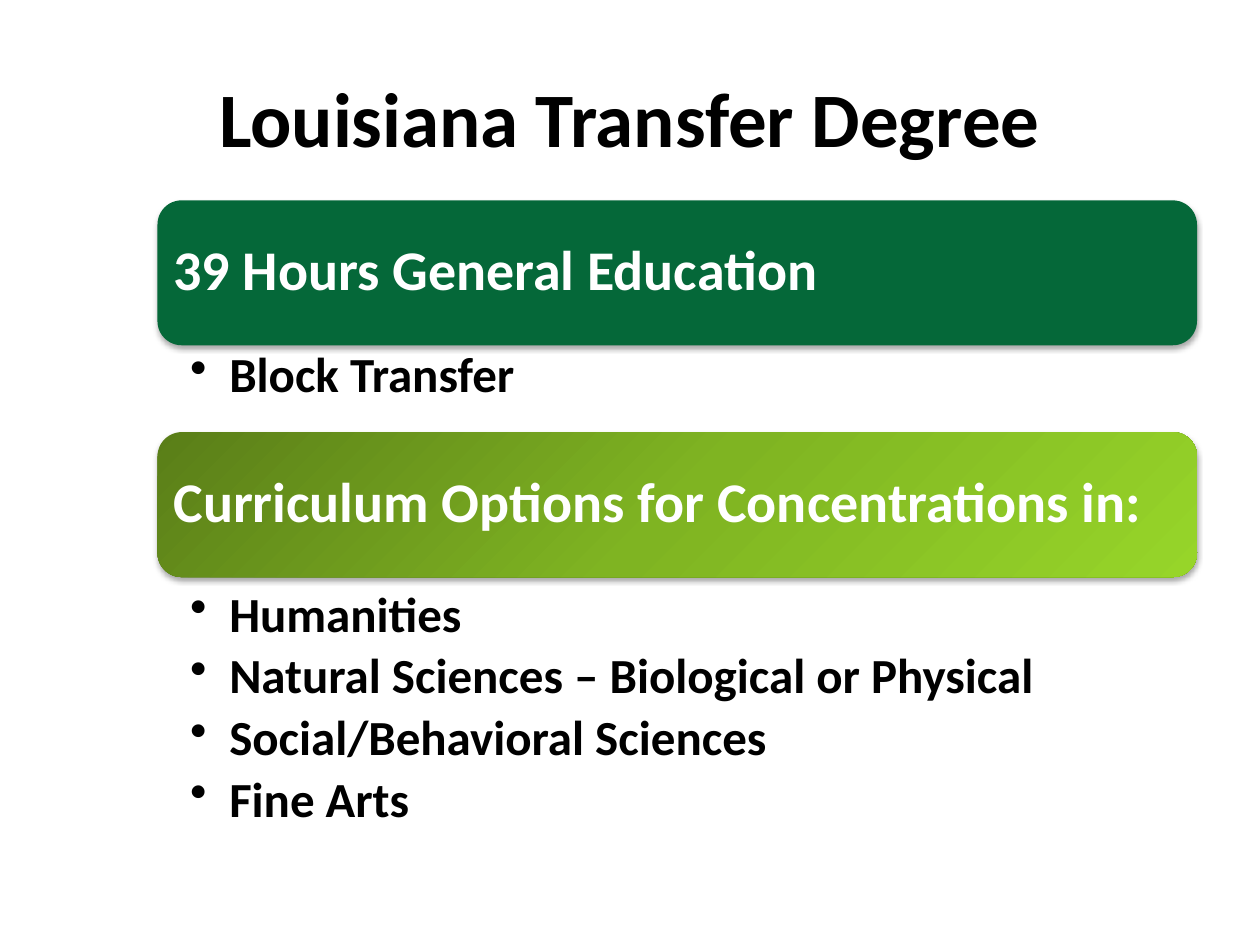
from dataclasses import dataclass

from lxml import etree
from pptx import Presentation
from pptx.dml.color import RGBColor
from pptx.enum import shapes, text
from pptx.oxml import ns
from pptx.util import Inches, Pt

BLACK = RGBColor(0x00, 0x00, 0x00)
WHITE = RGBColor(0xFF, 0xFF, 0xFF)
GREEN = RGBColor(0x05, 0x68, 0x39)
LIME_STOPS = (
    (0, RGBColor(0x5A, 0x7E, 0x18)),
    (50, RGBColor(0x7F, 0xB4, 0x22)),
    (100, RGBColor(0x97, 0xD5, 0x29)),
)

FONT = "Calibri"
LEFT, WIDTH = Inches(1.25), Inches(8.25)
BANNER_HEIGHT = Inches(1.15)
BULLET_INDENT = Inches(0.31)


@dataclass
class Section:
    heading: str
    top: float
    stops: tuple
    bullets: tuple
    bullets_top: float
    bullets_height: float


SECTIONS = (
    Section("39 Hours General Education", 1.59, ((0, GREEN),),
            ("Block Transfer",), 2.74, 1.01),
    Section("Curriculum Options for Concentrations in:", 3.43, LIME_STOPS,
            ("Humanities", "Natural Sciences – Biological or Physical",
             "Social/Behavioral Sciences", "Fine Arts"), 4.64, 2.09),
)


def add_element(parent, tag: str, **attributes):
    """Append a DrawingML element with the given attributes."""
    values = {name: str(value) for name, value in attributes.items()}
    return etree.SubElement(parent, ns.qn(tag), values)


def style(para, size: int, color: RGBColor) -> None:
    font = para.font
    font.name, font.size, font.bold = FONT, Pt(size), True
    font.color.rgb = color


def set_margins(frame, left: float, top: float, right: float, bottom: float) -> None:
    frame.margin_left, frame.margin_top = Inches(left), Inches(top)
    frame.margin_right, frame.margin_bottom = Inches(right), Inches(bottom)


def fill_banner(banner, stops: tuple) -> None:
    if len(stops) == 1:
        banner.fill.solid()
        banner.fill.fore_color.rgb = stops[0][1]
        return
    banner.fill.gradient()
    gradient = banner._element.spPr.find(ns.qn("a:gradFill"))
    for child in list(gradient):
        gradient.remove(child)
    stop_list = add_element(gradient, "a:gsLst")
    for percent, color in stops:
        stop = add_element(stop_list, "a:gs", pos=percent * 1000)
        add_element(stop, "a:srgbClr", val=color)
    add_element(gradient, "a:lin", ang=45 * 60000, scaled=0)


def add_shadow(banner) -> None:
    banner.shadow.inherit = False
    effects = banner._element.spPr.find(ns.qn("a:effectLst"))
    shadow = add_element(effects, "a:outerShdw", blurRad=Pt(3.1), dist=Pt(1.8),
                         dir=90 * 60000, rotWithShape=0)
    color = add_element(shadow, "a:srgbClr", val=BLACK)
    add_element(color, "a:alpha", val=35000)


def add_title(page, title: str) -> None:
    box = page.shapes.add_textbox(Inches(0.5), Inches(0.3), Inches(9), Inches(1.25))
    frame = box.text_frame
    frame.word_wrap = True
    frame.vertical_anchor = text.MSO_ANCHOR.MIDDLE
    para = frame.paragraphs[0]
    para.text = title
    para.alignment = text.PP_ALIGN.CENTER
    style(para, 44, BLACK)


def add_banner(page, section: Section) -> None:
    banner = page.shapes.add_shape(shapes.MSO_SHAPE.ROUNDED_RECTANGLE, LEFT,
                                   Inches(section.top), WIDTH, BANNER_HEIGHT)
    fill_banner(banner, section.stops)
    banner.line.fill.background()
    add_shadow(banner)
    frame = banner.text_frame
    frame.word_wrap = True
    frame.vertical_anchor = text.MSO_ANCHOR.MIDDLE
    # The rounded corners add their own inset to these margins
    set_margins(frame, 0.07, 0.07, 0.07, 0.07)
    para = frame.paragraphs[0]
    para.text = section.heading
    para.alignment = text.PP_ALIGN.LEFT
    para.line_spacing = 0.9
    style(para, 32, WHITE)


def add_bullets(page, section: Section) -> None:
    box = page.shapes.add_textbox(LEFT, Inches(section.bullets_top),
                                  WIDTH, Inches(section.bullets_height))
    frame = box.text_frame
    frame.word_wrap = True
    set_margins(frame, 0.26, 0.04, 0.22, 0.04)
    for index, item in enumerate(section.bullets):
        para = frame.paragraphs[0] if index == 0 else frame.add_paragraph()
        para.text = item
        para.level = 1
        para.line_spacing = 0.9
        para.space_after = Pt(5)
        properties = para._p.get_or_add_pPr()
        properties.set("marL", str(BULLET_INDENT))
        properties.set("indent", str(-BULLET_INDENT))
        add_element(properties, "a:buChar", char="•")
        style(para, 28, BLACK)


def main() -> None:
    deck = Presentation()
    deck.slide_width, deck.slide_height = Inches(10), Inches(7.5)
    page = deck.slides.add_slide(deck.slide_layouts[6])

    # Title
    add_title(page, "Louisiana Transfer Degree")

    # Banners, each with its bullet list
    for section in SECTIONS:
        add_banner(page, section)
        add_bullets(page, section)

    deck.save("out.pptx")


if __name__ == "__main__":
    main()
